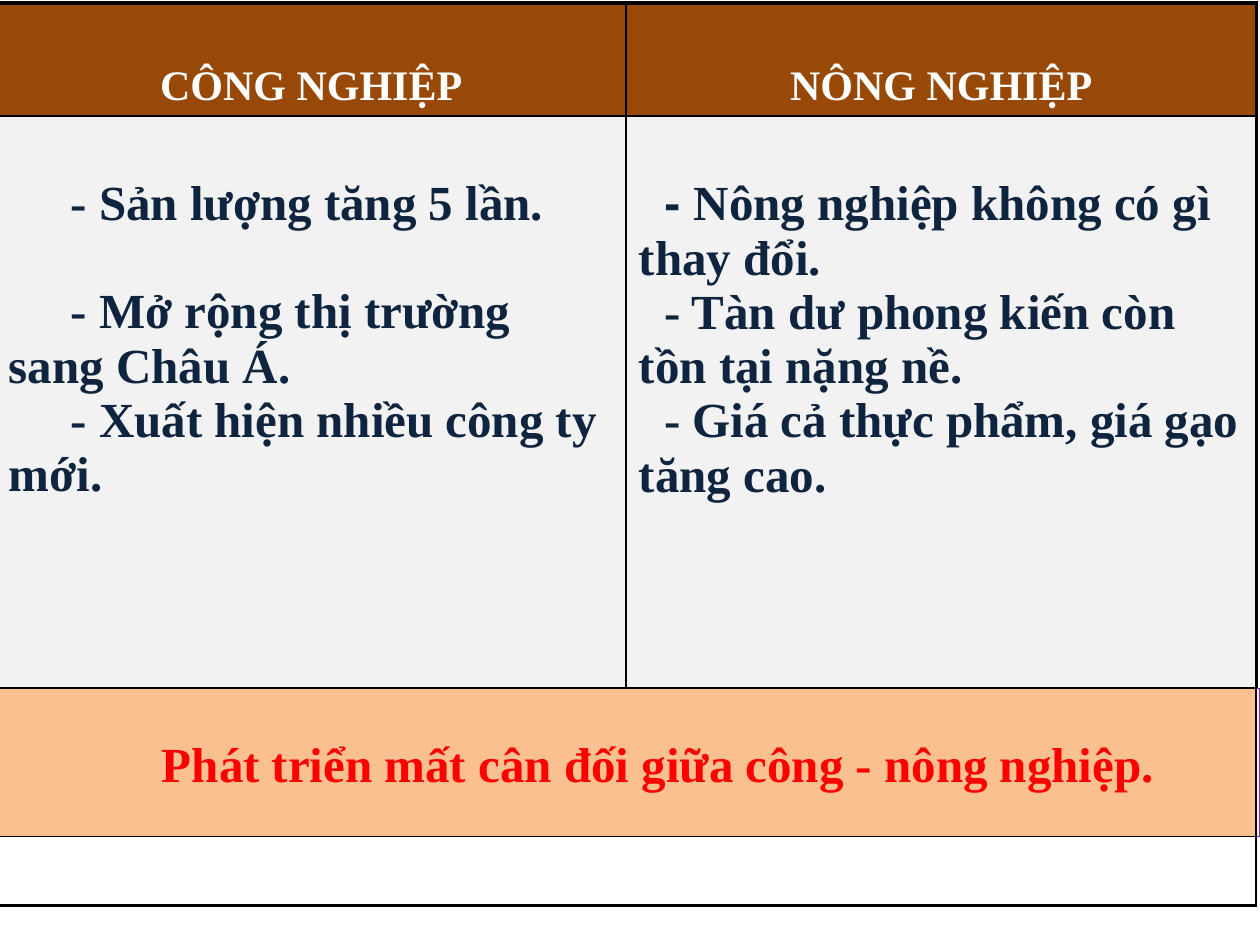
from lxml import etree
from pptx import Presentation, util as u
from pptx.dml.color import RGBColor
from pptx.enum import shapes, text
from pptx.oxml.ns import qn

WIDTH, HEIGHT = 10, 7.5
THIN, THICK = 1, 2.25
CENTER, LEFT = text.PP_ALIGN.CENTER, text.PP_ALIGN.LEFT


def color(hex_value):
    return RGBColor.from_string(hex_value)


class SlideBuilder:
    """Holds the style and the current slide; lengths are shares of the slide."""

    font_name = "Times New Roman"
    line_color = "000000"

    def __init__(self, presentation):
        self.slide = presentation.slides.add_slide(presentation.slide_layouts[6])

    def x(self, share):
        return u.Inches(share * WIDTH)

    def y(self, share):
        return u.Inches(share * HEIGHT)

    def add_words(self, paragraph, content, size, hex_value, align=LEFT, **spacing):
        paragraph.alignment = align
        for name, points in spacing.items():
            setattr(paragraph, name, u.Pt(points))
        runs = content if isinstance(content, list) else [(content, self.font_name)]
        for words, font_name in runs:
            run = paragraph.add_run()
            run.text = words
            style = {"name": font_name, "size": u.Pt(size), "bold": True}
            for name, value in style.items():
                setattr(run.font, name, value)
            run.font.color.rgb = color(hex_value)

    def indent(self, paragraph, inches):
        properties = paragraph._p.get_or_add_pPr()
        properties.set("marL", "0")
        properties.set("indent", str(u.Inches(inches)))

    def table(self, left, top, column_widths, row_heights):
        rows, columns = len(row_heights), len(column_widths)
        table = self.slide.shapes.add_table(
            rows, columns, self.x(left), self.y(top),
            self.x(sum(column_widths)), self.y(sum(row_heights))).table
        table.first_row = table.horz_banding = False
        for column, share in zip(table.columns, column_widths):
            column.width = self.x(share)
        for row, share in zip(table.rows, row_heights):
            row.height = self.y(share)
        # Thick frame around thin inner lines
        for r in range(rows):
            for c in range(columns):
                edges = {"lnL": c == 0, "lnR": c == columns - 1,
                         "lnT": r == 0, "lnB": r == rows - 1}
                for tag, outer in edges.items():
                    self.border(table.cell(r, c), tag, THICK if outer else THIN)
        return table

    def border(self, cell, tag, points):
        line = etree.SubElement(cell._tc.get_or_add_tcPr(), qn("a:" + tag),
                                w=str(u.Pt(points)))
        fill = etree.SubElement(line, qn("a:solidFill"))
        etree.SubElement(fill, qn("a:srgbClr"), val=self.line_color)

    def fill(self, item, hex_value):
        item.fill.solid()
        item.fill.fore_color.rgb = color(hex_value)

    def band(self, left, top, width, height, fill, line):
        shape = self.slide.shapes.add_shape(
            shapes.MSO_SHAPE.RECTANGLE, self.x(left), self.y(top),
            self.x(width), self.y(height))
        shape.shadow.inherit = False
        self.fill(shape, fill)
        shape.line.color.rgb = color(line)
        shape.line.width = u.Pt(0.75)
        return shape


def main():
    presentation = Presentation()
    presentation.slide_width = u.Inches(WIDTH)
    presentation.slide_height = u.Inches(HEIGHT)
    builder = SlideBuilder(presentation)

    # Comparison table
    left = -0.003
    table = builder.table(left, 0.003, [0.5, 0.5], [0.12, 0.605, 0.23])
    serif = builder.font_name
    columns = [
        ("CÔNG NGHIỆP", 0.49, 31, [
            "- Sản lượng tăng 5 lần.",
            "- Mở rộng thị trường sang Châu Á.",
            "- Xuất hiện nhiều công ty mới."]),
        ("NÔNG NGHIỆP", 0.2, 0, [
            [("- ", "Arial"), ("Nông nghiệp không có gì thay đổi.", serif)],
            "- Tàn dư phong kiến còn tồn tại nặng nề.",
            "- Giá cả thực phẩm, giá gạo tăng cao."]),
    ]
    for index, (heading, indent, first_gap, points) in enumerate(columns):
        header, body = table.cell(0, index), table.cell(1, index)
        builder.fill(header, "984807")
        header.vertical_anchor = text.MSO_ANCHOR.BOTTOM
        builder.add_words(header.text_frame.paragraphs[0], heading, 24, "FFFFFF", CENTER)

        builder.fill(body, "F2F2F2")
        body.margin_top = u.Inches(0.48)
        frame = body.text_frame
        for number, point in enumerate(points):
            paragraph = frame.add_paragraph() if number else frame.paragraphs[0]
            gap = 0 if number else first_gap
            builder.add_words(paragraph, point, 28, "0F243E", space_after=gap)
            builder.indent(paragraph, indent)

    # Empty bottom row
    bottom = table.cell(2, 0)
    bottom.merge(table.cell(2, 1))
    builder.fill(bottom, "FFFFFF")

    # Conclusion band over a slightly offset backing band
    place = {"top": 0.729, "width": 1, "height": 0.156}
    builder.band(0, fill="FDEADA", line="7030A0", **place)
    conclusion = builder.band(left, fill="FAC090", line="000000", **place)
    frame = conclusion.text_frame
    layout = {"word_wrap": True, "vertical_anchor": text.MSO_ANCHOR.MIDDLE,
              "margin_left": u.Inches(0.6)}
    for name, value in layout.items():
        setattr(frame, name, value)
    builder.add_words(frame.paragraphs[0], "Phát triển mất cân đối giữa công - nông nghiệp.",
                      28, "FF0000", CENTER, space_before=5.6)

    presentation.save("out.pptx")


if __name__ == "__main__":
    main()
